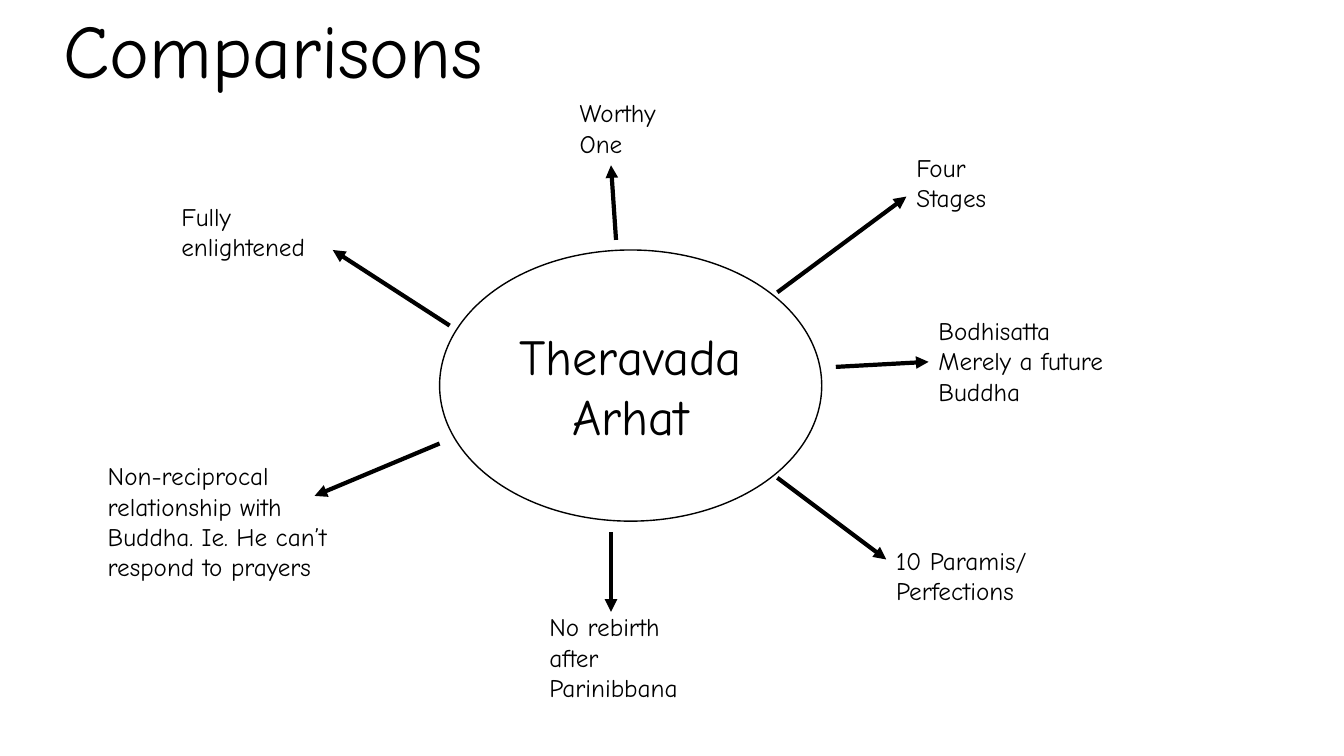
from lxml.etree import SubElement
from pptx import Presentation
from pptx.dml.color import RGBColor
from pptx.enum.shapes import MSO_CONNECTOR, MSO_SHAPE
from pptx.enum.text import MSO_ANCHOR, MSO_AUTO_SIZE, PP_ALIGN
from pptx.oxml.ns import qn
from pptx.util import Emu, Pt

PX = 9144  # EMU per px, 100 px to the inch
FONT = "Comic Neue"
BLACK = "000000"
WHITE = "FFFFFF"


def color(hex_string):
    return RGBColor.from_string(hex_string)


def write(shape, text, size, align=PP_ALIGN.LEFT, anchor=MSO_ANCHOR.TOP):
    """Put wrapped black text into a shape and return its paragraph."""
    frame = shape.text_frame
    frame.word_wrap = True
    frame.vertical_anchor = anchor
    frame.text = text
    paragraph = frame.paragraphs[0]
    paragraph.alignment = align
    font = paragraph.runs[0].font
    font.name = FONT
    font.size = Pt(size)
    font.color.rgb = color(BLACK)
    return paragraph


presentation = Presentation()
presentation.slide_width = Emu(1333 * PX)
presentation.slide_height = Emu(750 * PX)
slide = presentation.slides.add_slide(presentation.slide_layouts[6])
shapes = slide.shapes

# Title
title = shapes.add_textbox(-229 * PX, 32 * PX, 1000 * PX, 67 * PX)
heading = write(title, "Comparisons", 54, PP_ALIGN.CENTER, MSO_ANCHOR.BOTTOM)
heading.line_spacing = 0.9

# Central topic
topic = shapes.add_shape(
    MSO_SHAPE.OVAL, 436 * PX, 248 * PX, 379 * PX, 269 * PX)
topic.shadow.inherit = False
topic.fill.solid()
topic.fill.fore_color.rgb = color(WHITE)
topic.line.color.rgb = color(BLACK)
topic.line.width = Pt(1)
write(topic, "Theravada Arhat", 36, PP_ALIGN.CENTER, MSO_ANCHOR.MIDDLE)

# Each idea: text, box (left, top, width, height), arrow (x1, y1, x2, y2)
ideas = [
    ("Four Stages", (899, 146, 121, 71), (771, 290, 899, 195)),
    ("Bodhisatta Merely a future Buddha",
     (921, 308, 200, 101), (829, 364, 921, 359)),
    ("10 Paramis/ Perfections", (879, 536, 161, 71), (771, 474, 879, 555)),
    ("No rebirth after Parinibbana",
     (535, 602, 159, 101), (606, 528, 606, 607)),
    ("Non-reciprocal relationship with Buddha. Ie. He can’t respond to prayers",
     (97, 452, 256, 131), (436, 440, 312, 492)),
    ("Worthy One", (565, 92, 121, 71), (611, 238, 606, 164)),
    ("Fully enlightened", (170, 195, 160, 71), (446, 323, 330, 248)),
]

for text, box, ends in ideas:
    label = shapes.add_textbox(*[value * PX for value in box])
    write(label, text, 18)
    label.text_frame.auto_size = MSO_AUTO_SIZE.SHAPE_TO_FIT_TEXT

    arrow = shapes.add_connector(
        MSO_CONNECTOR.STRAIGHT, *[value * PX for value in ends])
    arrow.line.color.rgb = color(BLACK)
    arrow.line.width = Pt(3)
    SubElement(arrow.line._get_or_add_ln(), qn("a:tailEnd"), type="triangle")
    SubElement(arrow._element.spPr, qn("a:effectLst"))

presentation.save("out.pptx")
